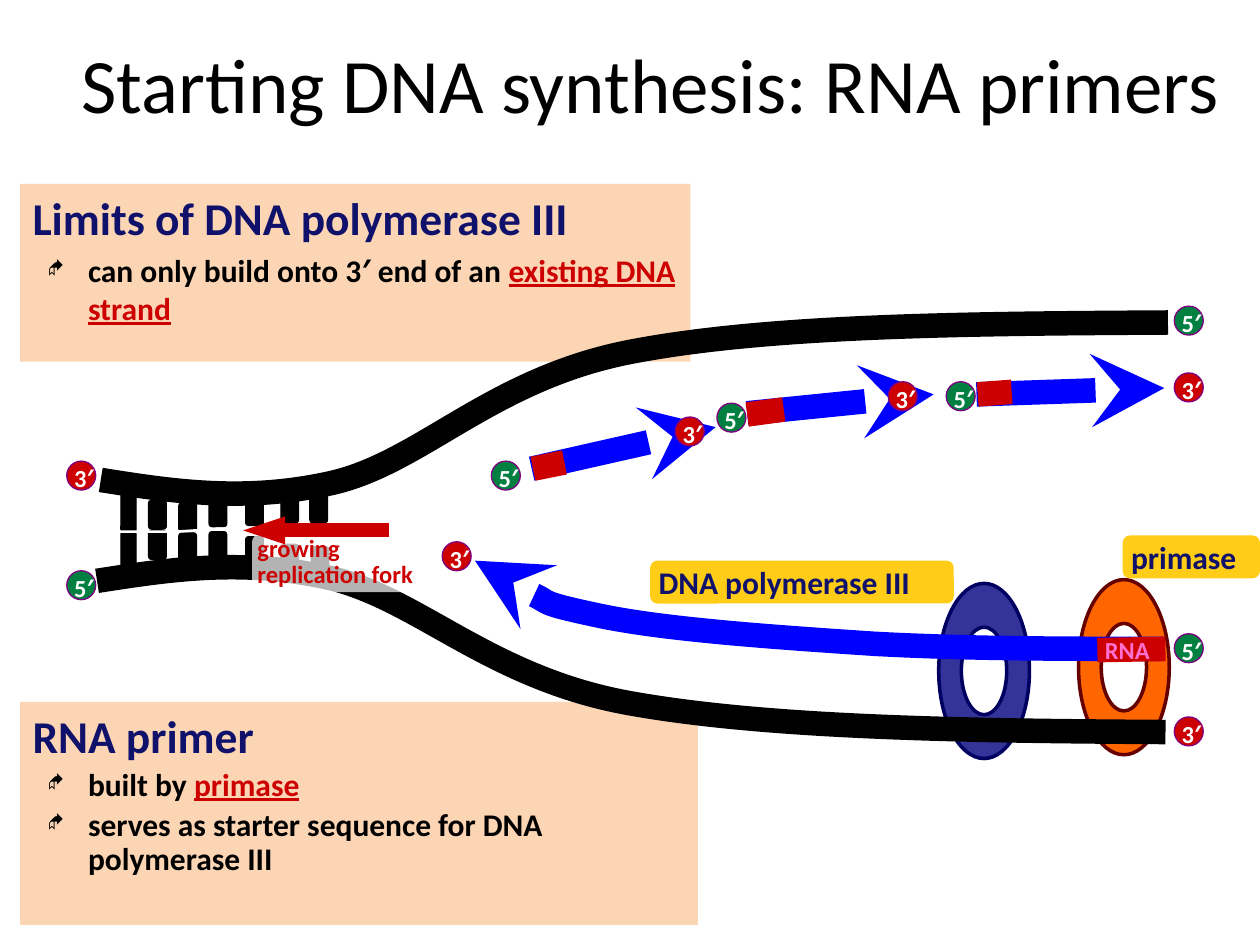
from lxml import etree
from pptx import Presentation
from pptx import util as u
from pptx.dml.color import RGBColor
from pptx.enum import shapes as kinds, text as txt
from pptx.oxml.ns import qn


class Theme:
    font, bullet_font = "Calibri", "Wingdings"
    black, white = "000000", "FFFFFF"
    navy, red, blue, green = "0F116A", "CC0000", "0000FF", "008040"
    peach, yellow, pink, purple = "FCD5B5", "FFCC18", "FF6FCF", "800080"
    title, heading, body, small = 44, 26, 18, 14
    strand = 14


# ---- Content ----
TITLE = "Starting DNA synthesis: RNA primers"
# box, heading, line spacing, bullets as (plain words, key words)
PANELS = [
    ((0.16, 5.57, 5.38, 1.77), "RNA primer", 0.9,
     [("built by ", "primase"),
      ("serves as starter sequence for DNA polymerase III", "")]),
    ((0.16, 1.46, 5.32, 1.41), "Limits of DNA polymerase III", 1.0,
     [("can only build onto 3′ end of an ", "existing DNA strand")]),
]
POLYMERASE_RING = ((7.45, 4.63), "333399", "000060")
PRIMASE_RING = ((8.56, 4.6), "FF6600", "660000")
POLYMERASE_LABEL = ("DNA polymerase III", (5.16, 4.45, 2.41, 0.34))
PRIMASE_LABEL = ("primase", (8.91, 4.25, 1.09, 0.34))
FORK_LABEL = ["growing", "replication fork"]

# Curves: start point, then triples of Bezier points
PARENT_STRANDS = [
    [(0.8, 3.81), (1.37, 3.9), (1.95, 3.99), (2.65, 3.83), (3.36, 3.66), (3.91, 3),
     (5.02, 2.79), (6.12, 2.58), (7.7, 2.57), (9.27, 2.56)],
    [(0.77, 4.61), (1.35, 4.52), (1.93, 4.43), (2.63, 4.59), (3.33, 4.76), (3.89, 5.38),
     (4.99, 5.58), (6.1, 5.78), (7.67, 5.8), (9.25, 5.81)],
]
LEADING_STRAND = [(3.77, 4.45), (4.01, 4.61), (4.25, 4.78), (4.77, 4.89), (5.3, 5),
                  (6.19, 5.06), (6.94, 5.11), (7.68, 5.15), (8.46, 5.15), (9.24, 5.15)]
PAIR_GAP = [(0.8, 4.22), (1.02, 4.22), (1.24, 4.22), (1.4, 4.22), (1.56, 4.21),
            (1.69, 4.2), (1.77, 4.2), (1.86, 4.19), (1.88, 4.19), (1.91, 4.2)]
OKAZAKI = [((4.22, 3.72), (5.68, 3.39)), ((5.93, 3.28), (7.41, 3.13)),
           ((7.75, 3.13), (9.24, 3.08))]
LEADING_PRIMER, *LAGGING_PRIMERS = [
    ((9.25, 5.15), (8.71, 5.16)), ((7.76, 3.13), (8.03, 3.11)),
    ((4.23, 3.72), (4.48, 3.67)), ((5.93, 3.29), (6.22, 3.25))]
# Base pairs: left, upper top, lower top
BASE_PAIRS = [(1.18, 3.97, 4.21), (1.42, 3.99, 4.23), (1.66, 3.95, 4.22),
              (1.95, 3.94, 4.26), (2.23, 3.92, 4.32)]
END_PAIR = [(2.46, 3.82, 0.14, 0.33), (2.47, 4.34, 0.14, 0.23)]
FIRST_PAIR = [(0.96, top, 0.12, 0.32) for top in (3.9, 4.22)]
STRAND_ENDS = {
    "5′": [(0.53, 4.53), (9.32, 2.43), (9.32, 5.03), (3.9, 3.66), (5.69, 3.2), (7.51, 3.03)],
    "3′": [(3.51, 4.3), (0.53, 3.66), (9.32, 5.69), (5.36, 3.31), (7.05, 3.03), (9.32, 2.96)],
}

# ---- Helpers ----
deck = Presentation()
deck.slide_width, deck.slide_height = u.Inches(10), u.Inches(7.5)
slide = deck.slides.add_slide(deck.slide_layouts[6])


def inches(values):
    return [u.Inches(v) for v in values]


def rgb(color):
    return RGBColor.from_string(color)


def paint(shape, fill=None, line=None, width=0.75):
    shape.shadow.inherit = False
    if fill:
        shape.fill.solid()
        shape.fill.fore_color.rgb = rgb(fill)
    else:
        shape.fill.background()
    if line:
        stroke(shape, line, width)
    else:
        shape.line.fill.background()


def stroke(shape, color, width, **ends):
    shape.line.color.rgb = rgb(color)
    shape.line.width = u.Pt(width)
    for end, head in ends.items():
        etree.SubElement(shape.line._get_or_add_ln(), qn(f"a:{end}"), head)


def block(box, fill, line=None, kind=kinds.MSO_SHAPE.ROUNDED_RECTANGLE):
    shape = slide.shapes.add_shape(kind, *inches(box))
    paint(shape, fill, line)
    return shape


def style(run, size, color, bold=True):
    run.font.name, run.font.size, run.font.bold = Theme.font, u.Pt(size), bold
    run.font.color.rgb = rgb(color)


def write(shape, words, size, color, bold=True, margins=(0.1, 0.05), wrap=True,
          align=txt.PP_ALIGN.LEFT, spacing=1.0):
    frame = shape.text_frame
    frame.text = words
    frame.word_wrap = wrap
    frame.vertical_anchor = txt.MSO_ANCHOR.MIDDLE
    frame.margin_left = frame.margin_right = u.Inches(margins[0])
    frame.margin_top = frame.margin_bottom = u.Inches(margins[1])
    for line in frame.paragraphs:
        line.alignment, line.line_spacing = align, spacing
        style(line.runs[0], size, color, bold)


def text_box(box, *args, **options):
    write(slide.shapes.add_textbox(*inches(box)), *args, **options)


def bezier(*outlines, close=False):
    """Freeform whose points after each start are Bezier triples."""
    contours = [[inches(point) for point in outline] for outline in outlines]
    pen = slide.shapes.build_freeform(*contours[0][0], scale=1.0)
    for i, contour in enumerate(contours):
        if i:
            pen.move_to(*contour[0])
        pen.add_line_segments(contour[1:], close=False)
    shape = pen.convert_to_shape()
    outline = shape._element.find(".//" + qn("a:path"))
    segments = outline.findall(qn("a:lnTo"))
    for i in range(0, len(segments), 3):
        arc = etree.Element(qn("a:cubicBezTo"))
        segments[i].addprevious(arc)
        for segment in segments[i:i + 3]:
            arc.append(segment[0])
            outline.remove(segment)
    if close:
        for start in outline.findall(qn("a:moveTo"))[1:]:
            start.addprevious(etree.Element(qn("a:close")))
        etree.SubElement(outline, qn("a:close"))
    return shape


def curve(points, color, width, **ends):
    shape = bezier(points)
    paint(shape)
    stroke(shape, color, width, **ends)


def straight(start, end, color, **ends):
    middle = tuple((a + b) / 2 for a, b in zip(start, end))
    curve([start, start, middle, end], color, Theme.strand, **ends)


def ring(corner, fill, line):
    """Upright oval whose hole is half its size."""
    rx, ry, k = 0.36, 0.695, 0.55
    cx, cy = corner[0] + rx, corner[1] + ry
    unit = [(-1, 0), (-1, -k), (-k, -1), (0, -1), (k, -1), (1, -k), (1, 0),
            (1, k), (k, 1), (0, 1), (-k, 1), (-1, k), (-1, 0)]
    outer = [(cx + x * rx, cy + y * ry) for x, y in unit]
    hole = [(cx + x * rx / 2, cy - y * ry / 2) for x, y in unit]
    paint(bezier(outer, hole, close=True), fill, line, 2)


def tag(words, box):
    write(block(box, Theme.yellow), words, Theme.body, Theme.navy, margins=(0.05, 0))


def panel(box, heading, spacing, bullets):
    shape = block(box, Theme.peach, kind=kinds.MSO_SHAPE.RECTANGLE)
    write(shape, heading, Theme.heading, Theme.navy)
    frame = shape.text_frame
    frame.vertical_anchor = txt.MSO_ANCHOR.TOP
    frame.paragraphs[0].space_before = u.Pt(5.2)
    for plain, key in bullets:
        item = frame.add_paragraph()
        item.text = plain
        item.level, item.alignment = 1, txt.PP_ALIGN.LEFT
        item.line_spacing, item.space_before = spacing, u.Pt(3.6)
        style(item.runs[0], Theme.body, Theme.black)
        if key:
            run = item.add_run()
            run.text = key
            style(run, Theme.body, Theme.red)
            run.font.underline = True
        props = item._p.get_or_add_pPr()
        props.set("marL", str(u.Inches(0.44)))
        props.set("indent", str(u.Inches(-0.32)))
        etree.SubElement(etree.SubElement(props, qn("a:buClr")), qn("a:srgbClr"), val=Theme.black)
        etree.SubElement(props, qn("a:buSzPct"), val="60000")
        etree.SubElement(props, qn("a:buFont"), typeface=Theme.bullet_font)
        etree.SubElement(props, qn("a:buChar"), char="◆")


# ---- Enzymes, panels and title ----
ring(*POLYMERASE_RING)
tag(*POLYMERASE_LABEL)
for details in PANELS:
    panel(*details)
ring(*PRIMASE_RING)
text_box((0.5, 0.24, 9.33, 0.83), TITLE, Theme.title, Theme.black, bold=False,
         align=txt.PP_ALIGN.CENTER)

# ---- Parent DNA with base pairs ----
for strand in PARENT_STRANDS:
    curve(strand, Theme.black, Theme.strand)
inner_pairs = [(x, top, 0.14, 0.23) for x, *tops in BASE_PAIRS for top in tops]
for base in FIRST_PAIR + inner_pairs + END_PAIR:
    block(base, Theme.black, Theme.black)

# ---- New strands and their ends ----
curve(LEADING_STRAND, Theme.blue, Theme.strand, headEnd={"type": "stealth"})
for fragment in OKAZAKI:
    straight(*fragment, Theme.blue, tailEnd={"type": "stealth"})
for end_name, fill in (("5′", Theme.green), ("3′", Theme.red)):
    for x, y in STRAND_ENDS[end_name]:
        block((x, y, 0.23, 0.23), fill, Theme.purple, kinds.MSO_SHAPE.OVAL)
        text_box((x - 0.04, y - 0.03, 0.36, 0.33), end_name, Theme.small, Theme.white, wrap=False)

# ---- Replication fork ----
fork = block((2, 4.23, 1.45, 0.47), Theme.white)
etree.SubElement(fork.fill._xPr.find(".//" + qn("a:srgbClr")), qn("a:alpha"), val="70000")
write(fork, "\n".join(FORK_LABEL), Theme.small, Theme.red, margins=(0.02, 0), spacing=0.9)
direction = slide.shapes.add_connector(kinds.MSO_CONNECTOR.STRAIGHT,
                                       *inches((3.09, 4.21, 1.93, 4.21)))
stroke(direction, Theme.red, 8, tailEnd={"type": "triangle", "w": "sm"})
etree.SubElement(direction._element.spPr, qn("a:effectLst"))

# ---- RNA primers ----
for primer in (LEADING_PRIMER, *LAGGING_PRIMERS):
    straight(*primer, Theme.red)
tag(*PRIMASE_LABEL)
text_box((8.67, 4.99, 0.62, 0.33), "RNA", Theme.small, Theme.pink, wrap=False)
curve(PAIR_GAP, Theme.white, 1.5)

deck.save("out.pptx")
